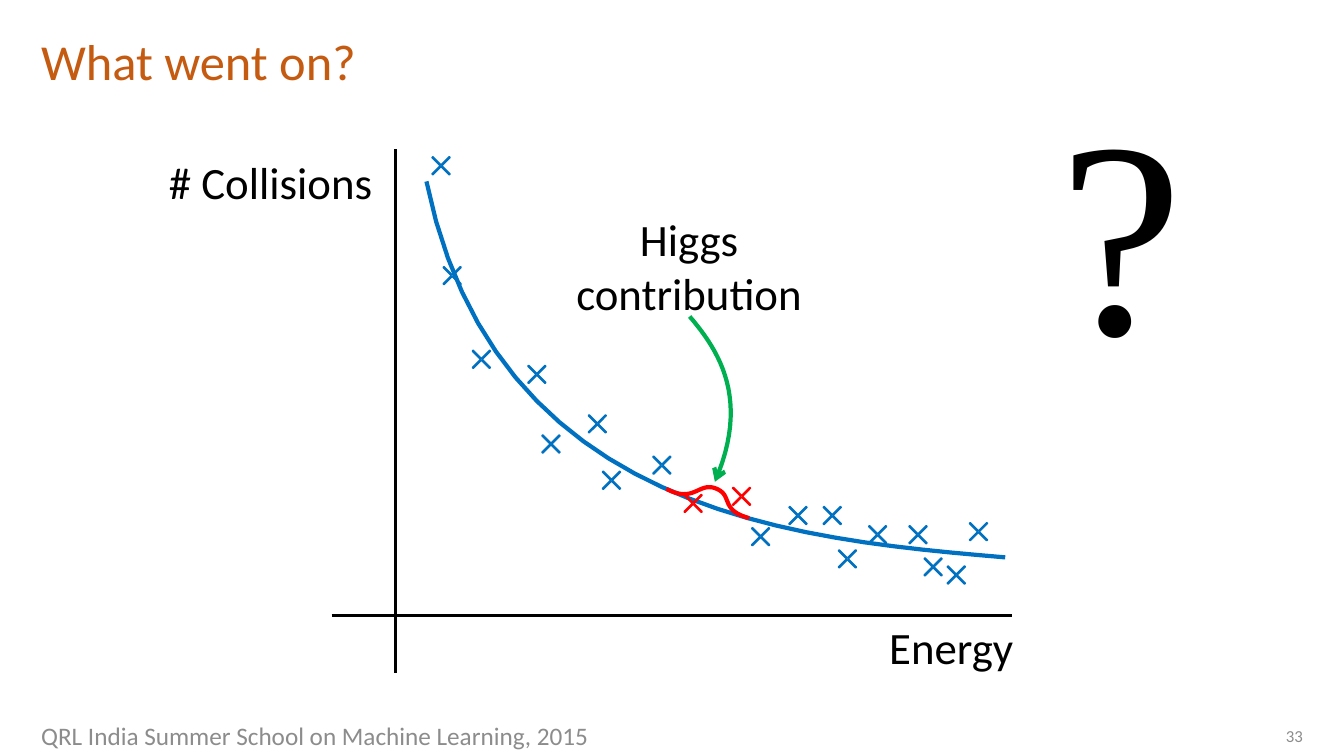
from lxml.etree import SubElement
from pptx import Presentation
from pptx.dml.color import RGBColor
from pptx.enum.shapes import MSO_CONNECTOR, MSO_SHAPE
from pptx.enum.text import MSO_ANCHOR, PP_ALIGN
from pptx.oxml.ns import qn
from pptx.util import Inches, Pt

HUES = {"title": "C55A11", "grey": "8C8C8C", "ink": "000000", "blue": "0070C0",
        "fill": "5B9BD5", "red": "FF0000", "green": "00B050"}
MID, TOP = MSO_ANCHOR.MIDDLE, MSO_ANCHOR.TOP
LEFT, MIDDLE, RIGHT = PP_ALIGN.LEFT, PP_ALIGN.CENTER, PP_ALIGN.RIGHT
SANS, SERIF = "Calibri", "Times New Roman"

HEADS = [
    ("What went on?", (0.31, 0.13, 12.7, 0.93), 36, "title", LEFT, MID, SANS),
    ("QRL India Summer School on Machine Learning, 2015",
     (0.31, 7.1, 12.16, 0.4), 18, "grey", LEFT, MID, SANS),
    ("33", (12.48, 7.1, 0.54, 0.4), 12, "grey", RIGHT, MID, SANS),
]
LABELS = [
    ("# Collisions", (1.45, 1.49, 2.47, 0.64), 32, "ink", MIDDLE, TOP, SANS),
    ("Energy", (8.2, 6.1, 2.47, 0.64), 32, "ink", MIDDLE, TOP, SANS),
    ("?", (9.84, 0.51, 2.56, 3.45), 199, "ink", MIDDLE, TOP, SERIF),
    ("Higgs contribution", (5.41, 2.05, 2.85, 1.18), 32, "ink", MIDDLE, TOP, SANS),
]
AXES = [(3.92, 1.48, 3.92, 6.68), (3.29, 6.11, 10.04, 6.11)]
TREND = [(4.23, 1.8), (4.9, 5.09), (7.87, 5.35), (9.97, 5.53)]
BUMP = [(6.61, 4.85), (6.89, 5), (6.93, 4.77), (7.11, 4.85),
        (7.27, 4.92), (7.14, 5.06), (7.43, 5.14)]
ARROW = [(7.09, 4.78), (7.44, 3.97), (7.14, 3.49), (6.84, 3.14)]
MARKS = {
    "blue": [(4.21, 1.48), (4.32, 2.57), (4.61, 3.4), (5.16, 3.55), (5.3, 4.24),
             (6.4, 4.45), (5.9, 4.6), (5.76, 4.04), (7.75, 4.95), (8.09, 4.95),
             (8.24, 5.38), (8.94, 5.14), (8.54, 5.14), (9.09, 5.46),
             (9.32, 5.54), (9.54, 5.11), (7.38, 5.16)],
    "red": [(6.71, 4.83), (7.19, 4.76)],
}
SIZE = 0.33
STEPS = 24


def paint(line, hue, width):
    """Set the colour and width of a line."""
    line.color.rgb = RGBColor.from_string(HUES[hue])
    line.width = Pt(width)


def write(slide, text, box, size, hue, align, anchor, face):
    """Add one text box."""
    frame = slide.shapes.add_textbox(*map(Inches, box)).text_frame
    frame.word_wrap = True
    frame.vertical_anchor = anchor
    para = frame.paragraphs[0]
    para.text = text
    para.alignment = align
    para.font.size = Pt(size)
    para.font.name = face
    para.font.color.rgb = RGBColor.from_string(HUES[hue])


def trace(points):
    """Return points along a chain of cubic curves."""
    track = [points[0]]
    for start in range(0, len(points) - 1, 3):
        part = points[start:start + 4]
        for step in range(1, STEPS + 1):
            t = step / STEPS
            u = 1 - t
            weights = (u ** 3, 3 * u * u * t, 3 * u * t * t, t ** 3)
            track.append(tuple(sum(w * p[axis] for w, p in zip(weights, part))
                               for axis in (0, 1)))
    return track


def curve(slide, points, hue):
    """Draw a smooth open curve."""
    track = [(Inches(x), Inches(y)) for x, y in trace(points)]
    pen = slide.shapes.build_freeform(*track[0])
    pen.add_line_segments(track[1:], close=False)
    shape = pen.convert_to_shape()
    shape.shadow.inherit = False
    shape.fill.background()
    paint(shape.line, hue, 3)
    return shape


def axis(slide, ends):
    """Draw one axis of the plot."""
    rule = slide.shapes.add_connector(MSO_CONNECTOR.STRAIGHT, *map(Inches, ends))
    paint(rule.line, "ink", 2.25)
    SubElement(rule._element.spPr, qn("a:effectLst"))


def mark(slide, x, y, hue):
    """Draw one data point as a cross."""
    cross = slide.shapes.add_shape(MSO_SHAPE.MATH_MULTIPLY, Inches(x), Inches(y),
                                   Inches(SIZE), Inches(SIZE))
    cross.adjustments[0] = 0.038
    cross.shadow.inherit = False
    cross.fill.solid()
    cross.fill.fore_color.rgb = RGBColor.from_string(HUES["fill"])
    paint(cross.line, hue, 1)


def main():
    """Build the slide and save it."""
    deck = Presentation()
    deck.slide_width, deck.slide_height = Inches(13.33), Inches(7.5)
    slide = deck.slides.add_slide(deck.slide_layouts[6])
    for item in HEADS:
        write(slide, *item)
    for ends in AXES:
        axis(slide, ends)
    curve(slide, TREND, "blue")
    curve(slide, BUMP, "red")
    for hue, spots in MARKS.items():
        for x, y in spots:
            mark(slide, x, y, hue)
    for item in LABELS:
        write(slide, *item)
    arrow = curve(slide, ARROW, "green")
    SubElement(arrow.line._get_or_add_ln(), qn("a:headEnd"), type="arrow")
    deck.save("out.pptx")


if __name__ == "__main__":
    main()
